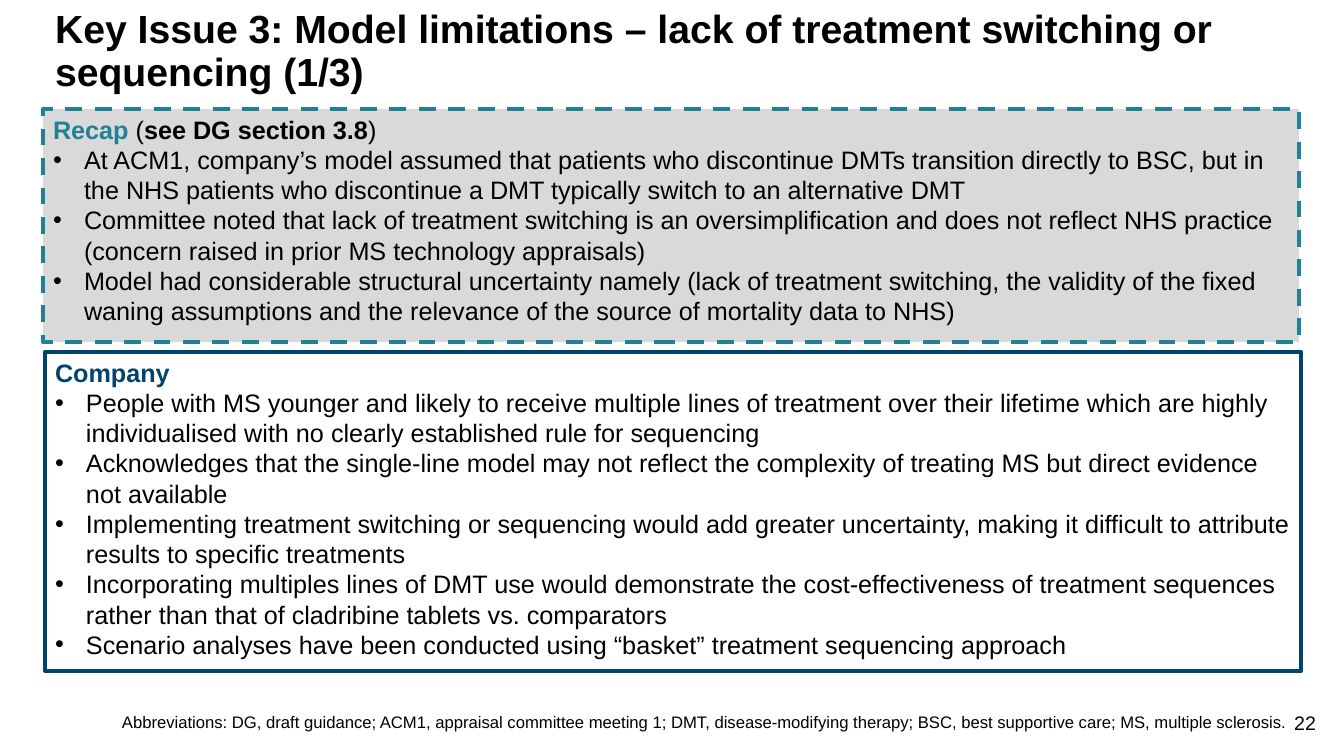
from lxml.etree import SubElement
from pptx import Presentation
from pptx.dml.color import RGBColor
from pptx.enum.dml import MSO_LINE as Dash
from pptx.enum.shapes import MSO_SHAPE as Shape
from pptx.enum.text import MSO_ANCHOR as Anchor, PP_ALIGN as Align
from pptx.oxml.ns import qn
from pptx.util import Emu, Pt

BLACK, TEAL, NAVY, GREY = "000000", "228096", "00436C", "D9D9D9"

RECAP = [
    "At ACM1, company’s model assumed that patients who discontinue DMTs transition directly to BSC, but in the NHS patients who discontinue a DMT typically switch to an alternative DMT",
    "Committee noted that lack of treatment switching is an oversimplification and does not reflect NHS practice (concern raised in prior MS technology appraisals)",
    "Model had considerable structural uncertainty namely (lack of treatment switching, the validity of the fixed waning assumptions and the relevance of the source of mortality data to NHS)",
]
COMPANY = [
    "People with MS younger and likely to receive multiple lines of treatment over their lifetime which are highly individualised with no clearly established rule for sequencing",
    "Acknowledges that the single-line model may not reflect the complexity of treating MS but direct evidence not available",
    "Implementing treatment switching or sequencing would add greater uncertainty, making it difficult to attribute results to specific treatments",
    "Incorporating multiples lines of DMT use would demonstrate the cost-effectiveness of treatment sequences rather than that of cladribine tablets vs. comparators",
    "Scenario analyses have been conducted using “basket” treatment sequencing approach",
]


def px(count):
    return Emu(round(count * 914400 / 100.8))


def paint(target, color):
    target.rgb = RGBColor.from_string(color)


def style(para, size, bold=None, color=BLACK):
    font = para.font
    font.name, font.size, font.bold = "Arial", Pt(size), bold
    paint(font.color, color)


def setup(shape):
    frame = shape.text_frame
    frame.word_wrap = True
    frame.vertical_anchor = Anchor.TOP
    frame.margin_left = frame.margin_right = px(10)
    frame.margin_top = frame.margin_bottom = px(5)
    return frame


def label(slide, place, text, size, bold=False, align=Align.LEFT, space=1.0):
    frame = setup(slide.shapes.add_textbox(*map(px, place)))
    para = frame.paragraphs[0]
    para.text, para.alignment, para.line_spacing = text, align, space
    style(para, size, bold)


def bullet(frame, text):
    para = frame.add_paragraph()
    para.text, para.alignment = text, Align.LEFT
    props = para._p.get_or_add_pPr()
    props.set("marL", str(px(31)))
    props.set("indent", str(-px(31)))
    SubElement(props, qn("a:buFont"), typeface="Arial")
    SubElement(props, qn("a:buChar"), char="•")
    style(para, 18)


def panel(slide, place, color, head, items, fill=None, dash=None):
    """Draw a framed box with a heading of (text, bold, colour) runs and bullets."""
    shape = slide.shapes.add_shape(Shape.RECTANGLE, *map(px, place))
    shape.shadow.inherit = False
    if fill:
        shape.fill.solid()
        paint(shape.fill.fore_color, fill)
    else:
        shape.fill.background()
    paint(shape.line.color, color)
    shape.line.width = Pt(3)
    if dash:
        shape.line.dash_style = dash
    frame = setup(shape)
    para = frame.paragraphs[0]
    para.alignment = Align.LEFT
    style(para, 18)
    for text, bold, tint in head:
        run = para.add_run()
        run.text, run.font.bold = text, bold
        paint(run.font.color, tint)
    for item in items:
        bullet(frame, item)


def main():
    deck = Presentation()
    deck.slide_width, deck.slide_height = px(1344), px(756)
    slide = deck.slides.add_slide(deck.slide_layouts[6])
    label(slide, (1275, 706, 51, 40), "22", 14, align=Align.RIGHT)
    label(slide, (45, 5, 1256, 66),
          "Key Issue 3: Model limitations – lack of treatment switching or sequencing (1/3)",
          28, bold=True, space=0.9)
    label(slide, (112, 711, 1195, 40),
          "Abbreviations: DG, draft guidance; ACM1, appraisal committee meeting 1; DMT, disease-modifying therapy; BSC, best supportive care; MS, multiple sclerosis.",
          11.9, space=0.8)
    head = [("Recap ", True, TEAL), ("(", False, BLACK),
            ("see DG section 3.8", True, BLACK), (")", False, BLACK)]
    panel(slide, (43, 109, 1256, 233), TEAL, head, RECAP, GREY, Dash.DASH)
    panel(slide, (45, 352, 1256, 319), NAVY, [("Company", True, NAVY)], COMPANY)
    deck.save("out.pptx")


if __name__ == "__main__":
    main()
